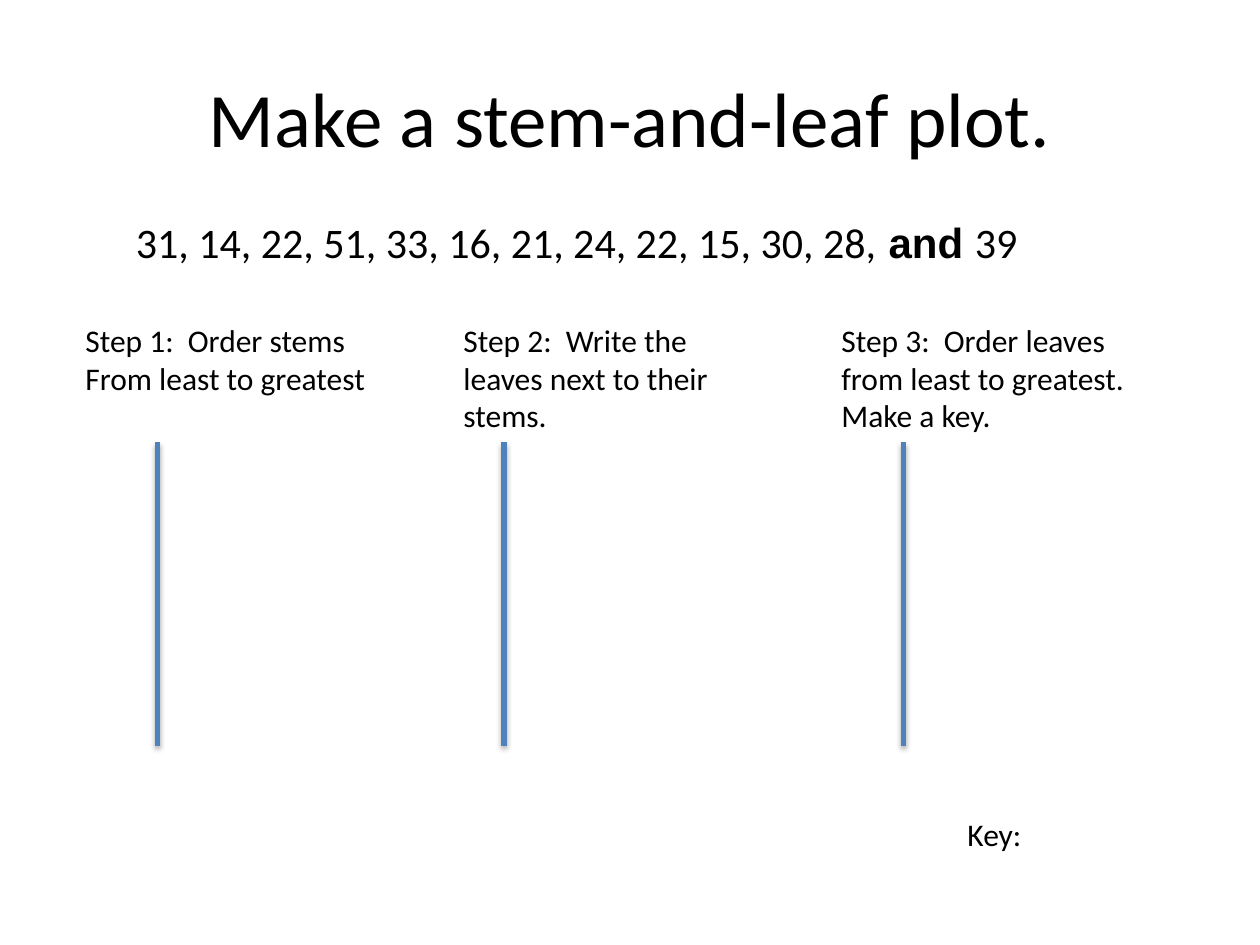
from dataclasses import dataclass

from lxml import etree
from pptx import Presentation
from pptx import util as u
from pptx.dml.color import RGBColor
from pptx.enum import shapes, text
from pptx.oxml import ns
from pptx.slide import Slide

BLACK = RGBColor(0x00, 0x00, 0x00)
BLUE = RGBColor(0x4F, 0x81, 0xBD)
WIDTH, HEIGHT = u.Inches(10), u.Inches(7.5)
STEP_COLUMN = u.Inches(3)
STEM_TOP, STEM_BOTTOM = 0.468, 0.789
STEM_LINES = (0.125, 0.4, 0.717)


@dataclass(frozen=True)
class Run:
    wording: str
    font: str = "Calibri"
    bold: bool = False


@dataclass(frozen=True)
class TextBlock:
    left: float
    top: float
    width: float
    height: float
    size: int
    lines: tuple[tuple[Run, ...], ...]
    centred: bool = False
    tab_count: int = 0


STEP_ROWS = (
    ("Step 1:  Order stems", "Step 2:  Write the", "Step 3:  Order leaves"),
    ("From least to greatest", "leaves next to their", "from least to greatest."),
    ("", "stems.", "Make a key."),
)

TEXT_BLOCKS = (
    TextBlock(0.05, 0.04, 0.9, 0.167, 44,
              ((Run("Make a stem-and-leaf plot."),),), centred=True),
    TextBlock(0.098, 0.223, 0.75, 0.067, 24, ((
        Run("31, 14, 22, 51, 33, 16, 21, 24, 22, 15, 30, 28,"),
        Run(" and ", "Arial", True),
        Run("39"),
    ),)),
    TextBlock(0.058, 0.333, 0.85, 0.135, 18,
              tuple((Run("\t".join(row)),) for row in STEP_ROWS), tab_count=2),
    TextBlock(0.758, 0.856, 0.175, 0.053, 18, ((Run("Key:"),),)),
)


def add_tab_stops(paragraph, count: int) -> None:
    tab_list = etree.SubElement(paragraph._p.get_or_add_pPr(), ns.qn("a:tabLst"))
    for column in range(1, count + 1):
        etree.SubElement(tab_list, ns.qn("a:tab"), pos=str(column * STEP_COLUMN), algn="l")


def draw_text(slide: Slide, block: TextBlock) -> None:
    shape = slide.shapes.add_textbox(
        round(block.left * WIDTH), round(block.top * HEIGHT),
        round(block.width * WIDTH), round(block.height * HEIGHT))
    frame = shape.text_frame
    frame.word_wrap = True
    if block.centred:
        frame.vertical_anchor = text.MSO_ANCHOR.MIDDLE
    for index, line in enumerate(block.lines):
        paragraph = frame.add_paragraph() if index else frame.paragraphs[0]
        if block.centred:
            paragraph.alignment = text.PP_ALIGN.CENTER
        if block.tab_count:
            add_tab_stops(paragraph, block.tab_count)
        for part in line:
            run = paragraph.add_run()
            run.text = part.wording
            run.font.name = part.font
            run.font.bold = part.bold
            run.font.size = u.Pt(block.size)
            run.font.color.rgb = BLACK


def draw_stem_line(slide: Slide, position: float) -> None:
    x = round(position * WIDTH)
    line = slide.shapes.add_connector(
        shapes.MSO_CONNECTOR.STRAIGHT,
        x, round(STEM_TOP * HEIGHT), x, round(STEM_BOTTOM * HEIGHT))
    line.line.color.rgb = BLUE
    line.line.width = u.Pt(3)
    effects = etree.SubElement(line._element.spPr, ns.qn("a:effectLst"))
    shadow = etree.SubElement(
        effects, ns.qn("a:outerShdw"), blurRad=str(u.Pt(3.1)), dist=str(u.Pt(1.8)),
        dir="5400000", rotWithShape="0")
    colour = etree.SubElement(shadow, ns.qn("a:srgbClr"), val=str(BLACK))
    etree.SubElement(colour, ns.qn("a:alpha"), val="35000")


def main() -> None:
    presentation = Presentation()
    presentation.slide_width, presentation.slide_height = WIDTH, HEIGHT
    slide = presentation.slides.add_slide(presentation.slide_layouts[6])
    for block in TEXT_BLOCKS:
        draw_text(slide, block)
    for position in STEM_LINES:
        draw_stem_line(slide, position)
    presentation.save("out.pptx")


if __name__ == "__main__":
    main()
